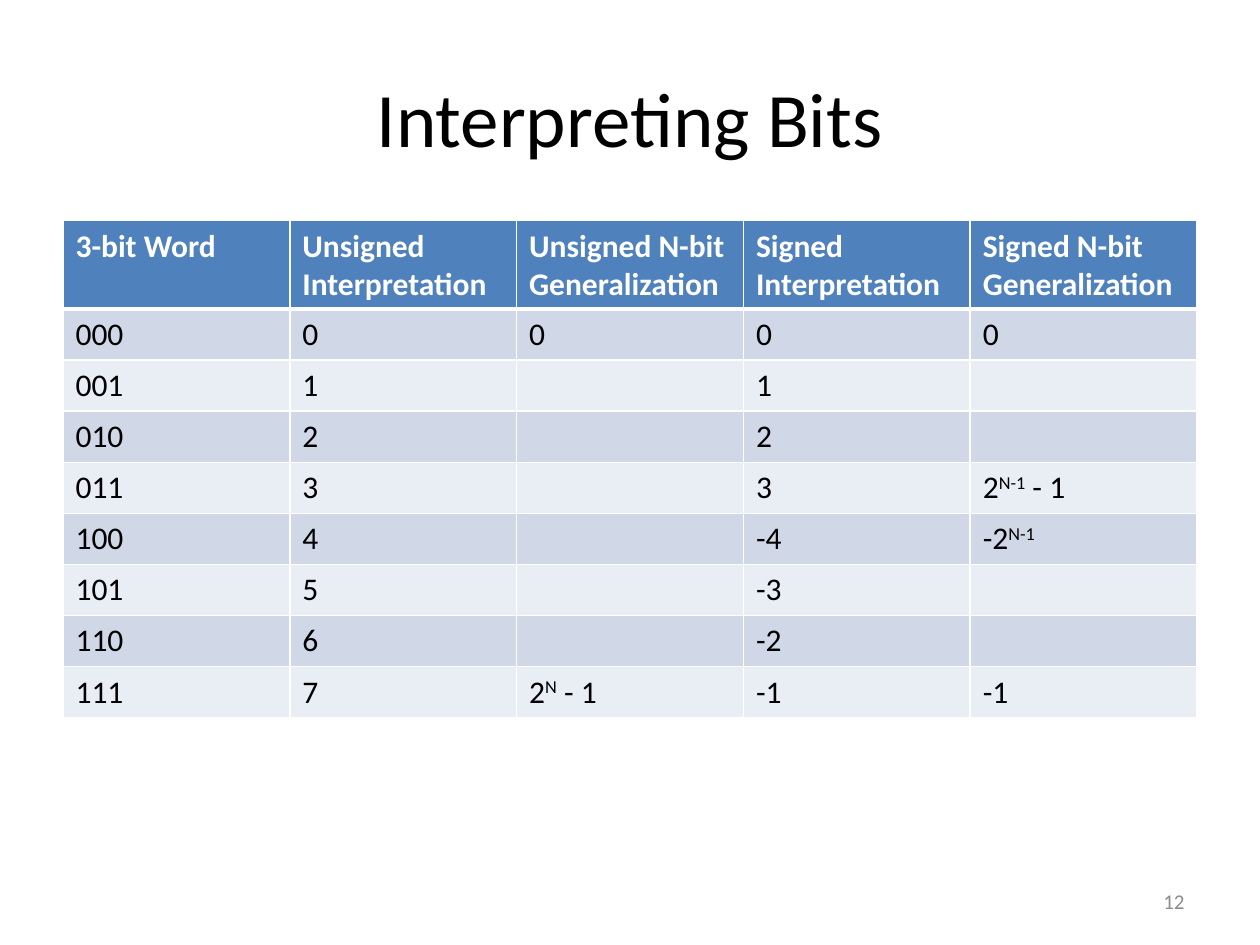
from lxml import etree
from pptx import Presentation
from pptx.dml.color import RGBColor
from pptx.enum.text import MSO_ANCHOR, PP_ALIGN
from pptx.oxml.ns import qn
from pptx.util import Cm, Pt

CENTER, RIGHT = PP_ALIGN.CENTER, PP_ALIGN.RIGHT
MIDDLE = MSO_ANCHOR.MIDDLE

FONT = "Calibri"
BLACK = RGBColor(0x00, 0x00, 0x00)
WHITE = RGBColor(0xFF, 0xFF, 0xFF)
GRAY = RGBColor(0x8C, 0x8C, 0x8C)
HEADER_BLUE = RGBColor(0x4F, 0x81, 0xBD)
BANDS = (RGBColor(0xD0, 0xD8, 0xE8), RGBColor(0xE9, 0xED, 0xF4))

HEADERS = ("3-bit Word", "Unsigned Interpretation", "Unsigned N-bit Generalization",
           "Signed Interpretation", "Signed N-bit Generalization")
# General forms by word value; text between carets is superscript
UNSIGNED_GENERAL = {0: "0", 7: "2^N^ - 1"}
SIGNED_GENERAL = {0: "0", 3: "2^N-1^ - 1", 4: "-2^N-1^", 7: "-1"}


def word_row(value):
    signed = value if value < 4 else value - 8
    return (f"{value:03b}", str(value), UNSIGNED_GENERAL.get(value, ""),
            str(signed), SIGNED_GENERAL.get(value, ""))


def style_paragraph(para, size, color, bold=False):
    font = para.font
    font.name, font.size, font.bold = FONT, Pt(size), bold
    font.color.rgb = color


def write_text(para, text):
    for index, part in enumerate(text.split("^")):
        if part:
            span = para.add_run()
            span.text = part
            if index % 2:
                span._r.get_or_add_rPr().set("baseline", "30000")


def add_text(page, text, left, top, width, height, size, color, align):
    box = page.shapes.add_textbox(Cm(left), Cm(top), Cm(width), Cm(height))
    frame = box.text_frame
    frame.word_wrap = True
    frame.vertical_anchor = MIDDLE
    para = frame.paragraphs[0]
    para.alignment = align
    style_paragraph(para, size, color)
    write_text(para, text)


def set_borders(cell, widths):
    properties = cell._tc.get_or_add_tcPr()
    for side, width in widths.items():
        line = etree.SubElement(properties, qn(f"a:ln{side}"), w=str(Pt(width)))
        fill = etree.SubElement(line, qn("a:solidFill"))
        etree.SubElement(fill, qn("a:srgbClr"), val=str(WHITE))


def fill_cell(cell, text, fill, color, bold, widths):
    set_borders(cell, widths)
    cell.fill.solid()
    cell.fill.fore_color.rgb = fill
    para = cell.text_frame.paragraphs[0]
    style_paragraph(para, 18, color, bold)
    write_text(para, text)


def add_bits_table(page):
    rows = [HEADERS] + [word_row(value) for value in range(8)]
    table = page.shapes.add_table(len(rows), len(HEADERS), Cm(1.27), Cm(4.45),
                                  Cm(22.86), Cm(10.02)).table
    for column in table.columns:
        column.width = Cm(22.86 / len(HEADERS))
    for index, texts in enumerate(rows):
        header = index == 0
        table.rows[index].height = Cm(1.78 if header else 1.03)
        fill = HEADER_BLUE if header else BANDS[(index - 1) % 2]
        color = WHITE if header else BLACK
        widths = {"L": 1, "R": 1, "T": 3 if index == 1 else 1, "B": 3 if header else 1}
        for cell, text in zip(table.rows[index].cells, texts):
            fill_cell(cell, text, fill, color, header, widths)


def main():
    deck = Presentation()
    deck.slide_width, deck.slide_height = Cm(25.4), Cm(19.05)
    page = deck.slides.add_slide(deck.slide_layouts[6])

    # Title
    add_text(page, "Interpreting Bits", 1.27, 0.76, 22.86, 3.18, 44, BLACK, CENTER)
    # Word values and their general forms
    add_bits_table(page)
    # Page number
    add_text(page, "12", 18.2, 17.66, 5.93, 1.01, 12, GRAY, RIGHT)

    deck.save("out.pptx")


if __name__ == "__main__":
    main()
